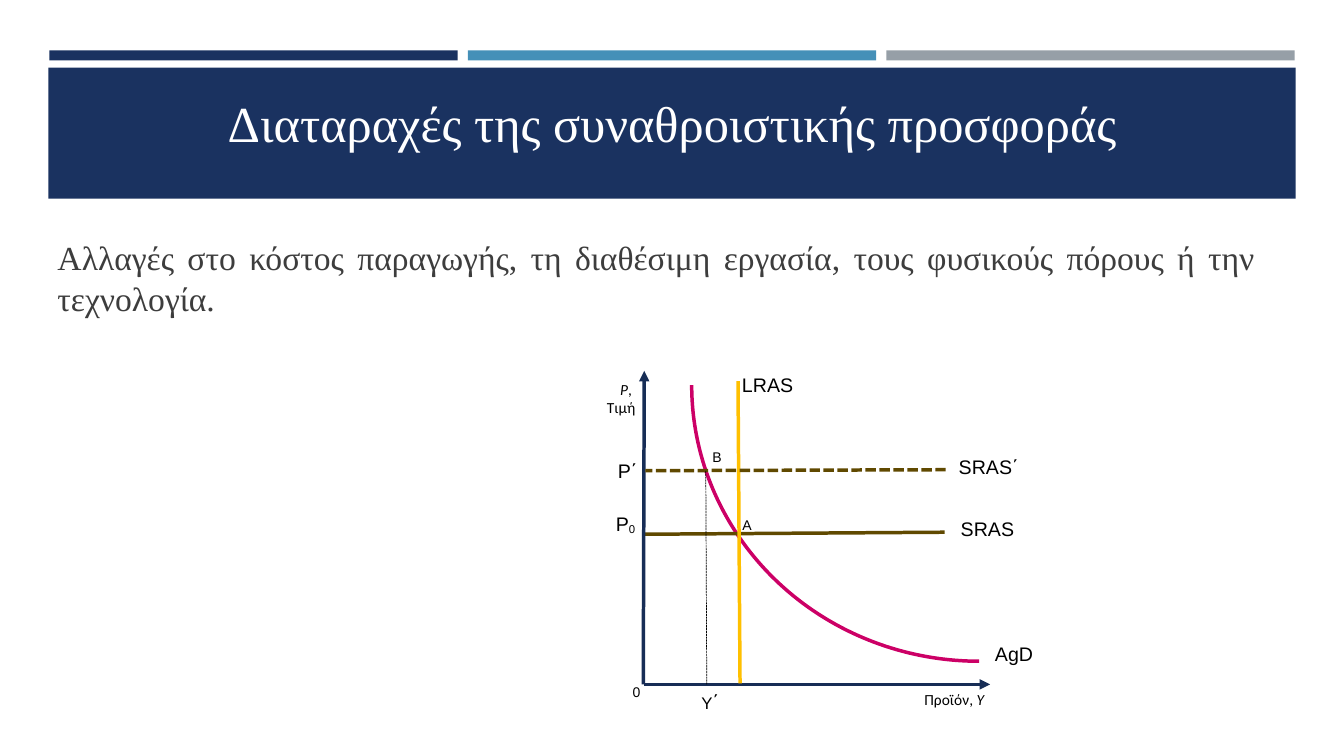
from pptx import Presentation
from pptx import util as u
from pptx.dml.color import RGBColor
from pptx.enum import dml, shapes, text
from pptx.oxml.ns import qn
from lxml import etree

Inches = u.Inches
COLORS = {
    "navy": "1A3260", "blue": "4590B8", "gray": "969FA7", "axis": "172D56",
    "demand": "CC0066", "short_run": "604900", "long_run": "FFC000",
    "body": "3D3D3D", "black": "000000", "white": "FFFFFF",
}
LEFT, CENTER, RIGHT = text.PP_ALIGN.LEFT, text.PP_ALIGN.CENTER, text.PP_ALIGN.RIGHT
ITALIC = {"italic": True}


def color(name):
    return RGBColor.from_string(COLORS[name])


def place(shape, left, top, width, height):
    shape.left, shape.top = Inches(left), Inches(top)
    shape.width, shape.height = Inches(width), Inches(height)


def style(span, font, size, fill, italic=False):
    span.font.name, span.font.size = font, u.Pt(size)
    span.font.color.rgb = color(fill)
    span.font.italic = italic


def fill_placeholder(holder, box, words, size, fill, align, anchor):
    place(holder, *box)
    frame = holder.text_frame
    frame.text = words
    frame.word_wrap = True
    frame.auto_size = text.MSO_AUTO_SIZE.NONE
    frame.vertical_anchor = anchor
    para = frame.paragraphs[0]
    para.alignment = align
    style(para.runs[0], "Times New Roman", size, fill)
    return para


def add_bar(page, left, top, width, height, fill):
    bar = page.shapes.add_shape(shapes.MSO_SHAPE.RECTANGLE, Inches(left), Inches(top),
                                Inches(width), Inches(height))
    bar.shadow.inherit = False
    bar.fill.solid()
    bar.fill.fore_color.rgb = color(fill)
    bar.line.fill.background()
    # Bars lie behind the title
    page.shapes.title.element.addprevious(bar.element)


def add_arc(page, left, top, width, height, stroke):
    arc = page.shapes.add_shape(shapes.MSO_SHAPE.ARC, Inches(left), Inches(top),
                                Inches(width), Inches(height))
    arc.rotation = 180
    arc.shadow.inherit = False
    arc.fill.background()
    arc.line.color.rgb = color(stroke)
    arc.line.width = u.Pt(2.5)


def add_line(page, start, end, stroke, weight=2.5, dashed=False, arrow=False):
    line = page.shapes.add_connector(shapes.MSO_CONNECTOR.STRAIGHT,
                                     *map(Inches, start + end))
    line.line.color.rgb = color(stroke)
    line.line.width = u.Pt(weight)
    if dashed:
        line.line.dash_style = dml.MSO_LINE.SQUARE_DOT
    properties = line.element.spPr
    if arrow:
        head = etree.SubElement(properties.find(qn("a:ln")), qn("a:headEnd"))
        head.set("type", "triangle")
    etree.SubElement(properties, qn("a:effectLst"))


def add_label(page, box, lines, size=14, font="Arial", align=LEFT, inset=0.1):
    """Each line is a list of (words, changes) spans."""
    label = page.shapes.add_textbox(*map(Inches, box))
    frame = label.text_frame
    frame.word_wrap = True
    frame.margin_left = frame.margin_right = Inches(inset)
    for index, spans in enumerate(lines):
        para = frame.add_paragraph() if index else frame.paragraphs[0]
        para.alignment = align
        for words, changes in spans:
            span = para.add_run()
            span.text = words
            style(span, font, changes.get("size", size), "black",
                  changes.get("italic", False))
            if "baseline" in changes:
                span.font._element.set("baseline", str(changes["baseline"]))


def add_header(page):
    bar_width, gap = 4.05, 0.1
    for index, fill in enumerate(("navy", "blue", "gray")):
        add_bar(page, 0.49 + index * (bar_width + gap), 0.5, bar_width, 0.1, fill)
    add_bar(page, 0.48, 0.67, 12.37, 1.3, "navy")
    fill_placeholder(page.shapes.title, (0.64, 0.69, 12.06, 0.87),
                     "Διαταραχές της συναθροιστικής προσφοράς", 36, "white",
                     CENTER, text.MSO_ANCHOR.BOTTOM)


def add_body(page):
    para = fill_placeholder(
        page.placeholders[1], (0.47, 2.28, 12.08, 1.01),
        "Αλλαγές στο κόστος παραγωγής, τη διαθέσιμη εργασία, τους φυσικούς πόρους "
        "ή την τεχνολογία.", 24, "body", text.PP_ALIGN.JUSTIFY, text.MSO_ANCHOR.TOP)
    para.space_before, para.space_after = u.Pt(0), u.Pt(6)
    para.line_spacing = 1.04
    # No bullet, no hanging indent
    properties = para._p.get_or_add_pPr()
    properties.set("marL", "0")
    properties.set("indent", "0")
    etree.SubElement(properties, qn("a:buNone"))


def add_diagram(page):
    # Curves and axes
    add_arc(page, 6.86, 1.08, 5.7, 5.48, "demand")
    add_line(page, (9.37, 5.28), (6.39, 5.3), "short_run")
    add_line(page, (6.39, 3.68), (6.38, 6.79), "axis", arrow=True)
    add_line(page, (9.82, 6.79), (6.39, 6.79), "axis", arrow=True)
    add_line(page, (7.34, 6.78), (7.32, 3.78), "long_run")
    add_line(page, (9.38, 4.66), (6.4, 4.67), "short_run", dashed=True)
    add_line(page, (7.01, 6.79), (7, 4.67), "black", 0.5, dashed=True)

    # Curve names
    for words, left, top in (("SRAS", 9.43, 5.08), ("AgD", 9.77, 6.32),
                             ("LRAS", 7.26, 3.65), ("SRAS΄", 9.41, 4.46)):
        add_label(page, (left, top, 0.91, 0.34), [[(words, {})]])

    # Equilibrium points and origin
    for words, left, top, align in (("A", 7.32, 5.08, CENTER), ("B", 7.02, 4.4, CENTER),
                                    ("0", 6.17, 6.73, RIGHT)):
        add_label(page, (left, top, 0.18, 0.27), [[(words, {})]], 10,
                  align=align, inset=0)

    # Axis titles
    add_label(page, (4.95, 3.72, 1.45, 0.44),
              [[("P", ITALIC), (", ", {})], [("Τιμή", {})]], 11, "Calibri", RIGHT)
    add_label(page, (8.72, 6.8, 1.14, 0.37),
              [[("Προϊόν, ", {}), ("Y", ITALIC)]], 11, "Calibri", RIGHT)

    # Axis values
    add_label(page, (6.01, 5.03, 0.5, 0.44), [[("P", {}), ("0", {"baseline": -10000})]])
    add_label(page, (6, 4.5, 0.42, 0.34), [[("P΄", {})]], align=RIGHT)
    add_label(page, (6.81, 6.8, 0.42, 0.34),
              [[("Υ", {"size": 12}), ("΄", {})]], align=RIGHT)


def main():
    deck = Presentation()
    deck.slide_width, deck.slide_height = Inches(13.33), Inches(7.5)
    page = deck.slides.add_slide(deck.slide_layouts[1])
    add_header(page)
    add_body(page)
    add_diagram(page)
    deck.save("out.pptx")


if __name__ == "__main__":
    main()
